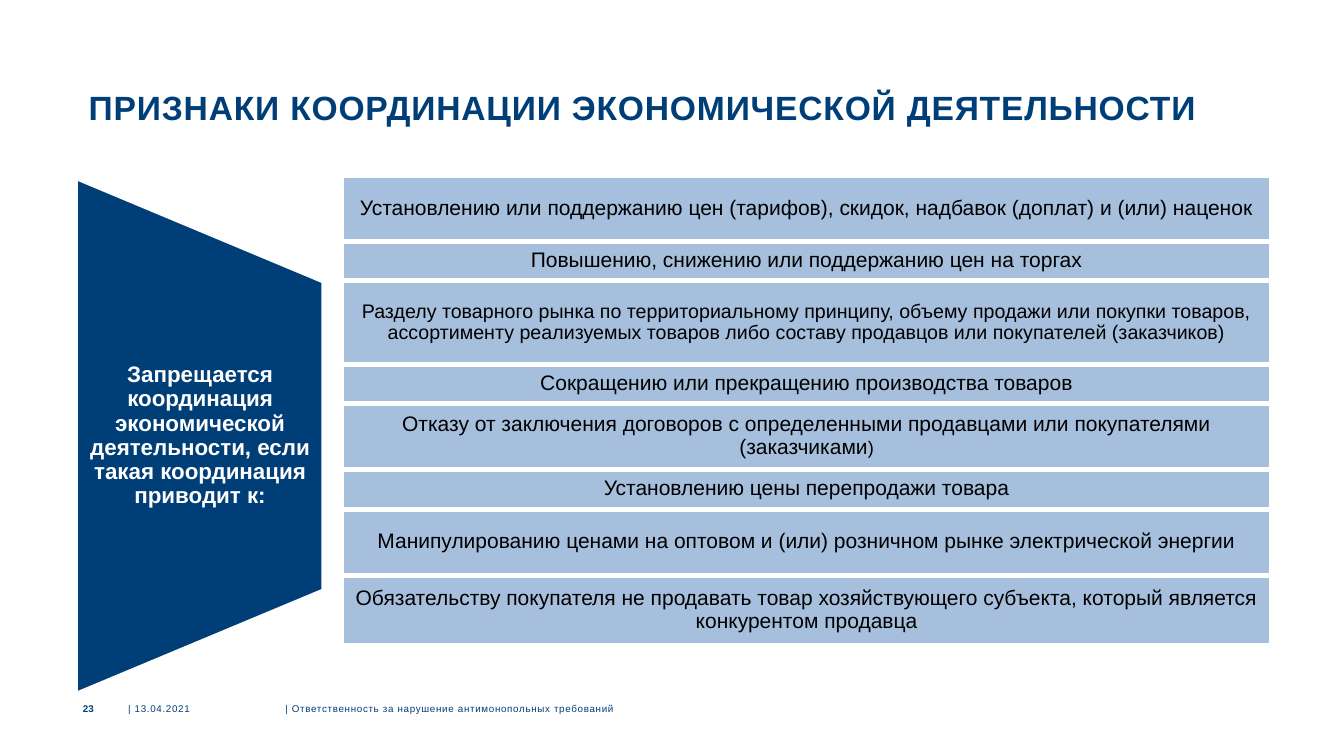
import pptx
import pptx.util
import pptx.dml.color
import pptx.enum.shapes
import pptx.enum.text
import pptx.oxml
import pptx.oxml.ns
import lxml.etree

Inches = pptx.util.Inches
Pt = pptx.util.Pt
RGBColor = pptx.dml.color.RGBColor
ALIGN = pptx.enum.text.PP_ALIGN
ANCHOR = pptx.enum.text.MSO_ANCHOR
SHAPE = pptx.enum.shapes.MSO_SHAPE

NAVY = RGBColor(0x00, 0x3E, 0x77)
BLUE = RGBColor(0x4F, 0x81, 0xBD)
WHITE = RGBColor(0xFF, 0xFF, 0xFF)
BLACK = RGBColor(0x00, 0x00, 0x00)

TITLE = "ПРИЗНАКИ КООРДИНАЦИИ ЭКОНОМИЧЕСКОЙ ДЕЯТЕЛЬНОСТИ"
BAN = "Запрещается координация экономической деятельности, если такая координация приводит к:"
CONSEQUENCES = [
    (0.62, [("Установлению или поддержанию цен (тарифов), скидок, надбавок (доплат) и (или) наценок", 15)]),
    (0.35, [("Повышению, снижению или поддержанию цен на торгах", 15)]),
    (0.8, [("Разделу товарного рынка по территориальному принципу, объему продажи или покупки товаров, "
            "ассортименту реализуемых товаров либо составу продавцов или покупателей (заказчиков)", 14)]),
    (0.35, [("Сокращению или прекращению производства товаров", 15)]),
    (0.62, [("Отказу от заключения договоров с определенными продавцами или покупателями (заказчиками", 15),
            (")", 13)]),
    (0.36, [("Установлению цены перепродажи товара", 15)]),
    (0.62, [("Манипулированию ценами на оптовом и (или) розничном рынке электрической энергии", 15)]),
    (0.66, [("Обязательству покупателя не продавать товар хозяйствующего субъекта, "
             "который является конкурентом продавца", 15)]),
]
FOOTER = [
    (0.79, 0.14, "23", ALIGN.RIGHT, True, 0, False),
    (1.27, 1.53, "| 13.04.2021", ALIGN.LEFT, False, 0.5, False),
    (2.83, 5.88, "| Ответственность за нарушение антимонопольных требований", ALIGN.LEFT, False, 0.5, True),
]
ROW_LEFT, ROW_TOP, ROW_WIDTH = Inches(3.41), Inches(1.76), Inches(9.18)
ROW_GAP = Pt(2.5)


def write(shape, spans, color, bold=False, align=ALIGN.LEFT, anchor=ANCHOR.MIDDLE,
          inset=(0, 0), line_spacing=None, tracking=0, wrap=True):
    frame = shape.text_frame
    frame.word_wrap = wrap
    frame.vertical_anchor = anchor
    frame.margin_left = frame.margin_right = Inches(inset[0])
    frame.margin_top = frame.margin_bottom = Inches(inset[1])
    para = frame.paragraphs[0]
    para.alignment = align
    para.line_spacing = line_spacing
    for text, size in spans:
        span = para.add_run()
        span.text = text
        span.font.name = "Arial"
        span.font.size = Pt(size)
        span.font.bold = bold
        span.font.color.rgb = color
        if tracking:
            span._r.get_or_add_rPr().set("spc", str(round(tracking * 100)))


def add_panel(page, kind, left, top, width, height, color):
    panel = page.shapes.add_shape(kind, left, top, width, height)
    panel.shadow.inherit = False
    panel.fill.solid()
    panel.fill.fore_color.rgb = color
    panel.line.color.rgb = WHITE
    panel.line.width = Pt(1)
    return panel


def make_half_transparent(panel):
    color = panel._element.spPr.find(
        pptx.oxml.ns.qn("a:solidFill") + "/" + pptx.oxml.ns.qn("a:srgbClr"))
    lxml.etree.SubElement(color, pptx.oxml.ns.qn("a:alpha")).set("val", "50000")


def main():
    deck = pptx.Presentation()
    deck.slide_width, deck.slide_height = Inches(13.33), Inches(7.5)
    page = deck.slides.add_slide(deck.slide_layouts[6])

    title = page.shapes.add_textbox(Inches(0.79), Inches(0.79), Inches(11.76), Inches(0.87))
    write(title, [(TITLE, 24)], NAVY, bold=True, anchor=ANCHOR.TOP,
          inset=(0.09, 0.04), line_spacing=Pt(31), tracking=0.6)

    funnel = add_panel(page, SHAPE.FLOWCHART_MANUAL_OPERATION,
                       Inches(-0.56), Inches(3.11), Inches(5.08), Inches(2.43), NAVY)
    funnel.rotation = 270
    ban = page.shapes.add_textbox(Inches(0.77), Inches(2.8), Inches(2.43), Inches(3.05))
    write(ban, [(BAN, 16)], WHITE, bold=True, align=ALIGN.CENTER,
          inset=(0.04, 0), line_spacing=0.9)

    top = ROW_TOP
    for height, spans in CONSEQUENCES:
        row = add_panel(page, SHAPE.RECTANGLE, ROW_LEFT, top, ROW_WIDTH, Inches(height), BLUE)
        make_half_transparent(row)
        write(row, spans, BLACK, align=ALIGN.CENTER, inset=(0.02, 0.02), line_spacing=0.9)
        top += Inches(height) + ROW_GAP

    for left, width, text, align, bold, tracking, wrap in FOOTER:
        note = page.shapes.add_textbox(Inches(left), Inches(6.95), Inches(width), Inches(0.16))
        write(note, [(text, 7)], NAVY, bold=bold, align=align, tracking=tracking, wrap=wrap)

    deck.save("out.pptx")


if __name__ == "__main__":
    main()
